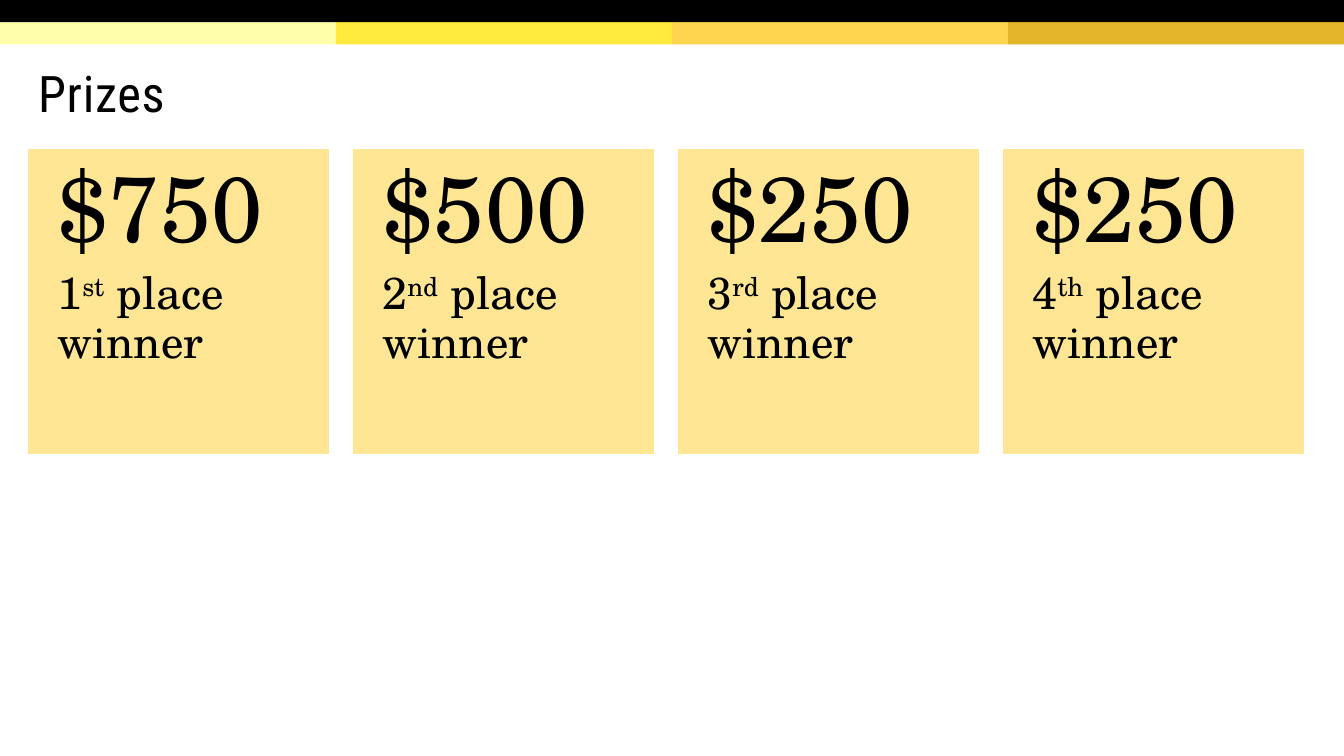
import pptx
import pptx.dml.color
import pptx.enum.shapes
import pptx.enum.text
import pptx.util

WIDTH, HEIGHT = 13.33, 7.5
COLUMNS = 4
BAND_HEIGHT = 0.22
CARD_LEFT, CARD_TOP, CARD_WIDTH, CARD_HEIGHT = 0.28, 1.48, 2.98, 3.02
CONTENT_WIDTH = 12.65
CARD_PITCH = (CONTENT_WIDTH - CARD_WIDTH) / (COLUMNS - 1)

BAND_COLORS = ["FFFFAA", "FFEA3D", "FFD54F", "E4B429"]
PRIZES = [("$750", "1", "st"), ("$500", "2", "nd"), ("$250", "3", "rd"), ("$250", "4", "th")]

TITLE_FONT = {"name": "Roboto Condensed", "size": pptx.util.Pt(36)}
AMOUNT_FONT = {"name": "TeX Gyre Schola", "size": pptx.util.Pt(66)}
PLACE_FONT = {"name": "TeX Gyre Schola", "size": pptx.util.Pt(32)}
MIDDLE = pptx.enum.text.MSO_ANCHOR.MIDDLE
TOP = pptx.enum.text.MSO_ANCHOR.TOP


def color(hex_string):
    return pptx.dml.color.RGBColor.from_string(hex_string)


def inches(*lengths):
    return [pptx.util.Inches(length) for length in lengths]


def add_block(slide, box, fill, outlined=False):
    block = slide.shapes.add_shape(pptx.enum.shapes.MSO_SHAPE.RECTANGLE, *inches(*box))
    block.shadow.inherit = False
    block.fill.solid()
    block.fill.fore_color.rgb = color(fill)
    if outlined:
        block.line.color.rgb = color(fill)
        block.line.width = pptx.util.Pt(0.5)
    else:
        block.line.fill.background()


def add_text(slide, box, pieces, font, insets, anchor, line_spacing=0.9):
    """Each piece is a text and a dict of run properties."""
    frame = slide.shapes.add_textbox(*inches(*box)).text_frame
    sides = ("margin_left", "margin_top", "margin_right", "margin_bottom")
    layout = dict(zip(sides, inches(*insets)), word_wrap=True, vertical_anchor=anchor)
    for key, value in layout.items():
        setattr(frame, key, value)
    paragraph = frame.paragraphs[0]
    paragraph.line_spacing = line_spacing
    for text, properties in pieces:
        run = paragraph.add_run()
        run.text = text
        for key, value in font.items():
            setattr(run.font, key, value)
        run.font.color.rgb = color("000000")
        for key, value in properties.items():
            run.font._element.set(key, value)


def add_prize(slide, column, amount, rank, suffix):
    left = CARD_LEFT + column * CARD_PITCH
    add_block(slide, (left, CARD_TOP, CARD_WIDTH, CARD_HEIGHT), "FFE695", outlined=True)
    place = [(rank, {}), (suffix, {"baseline": "30000"}), (" place winner", {})]
    add_text(slide, (left, 2.69, CARD_WIDTH, 1.81), place, PLACE_FONT,
             (0.29, 0, 0.29, 0.36), TOP)
    add_text(slide, (left, 1.39, CARD_WIDTH, 1.43), [(amount, {})], AMOUNT_FONT,
             (0.29, 0.18, 0.29, 0.18), MIDDLE)


def main():
    deck = pptx.Presentation()
    deck.slide_width, deck.slide_height = inches(WIDTH, HEIGHT)
    slide = deck.slides.add_slide(deck.slide_layouts[6])

    # Header bands
    band_width = WIDTH / COLUMNS
    for column, fill in enumerate(BAND_COLORS):
        add_block(slide, (column * band_width, BAND_HEIGHT, band_width, BAND_HEIGHT), fill)
    add_block(slide, (0, 0, WIDTH, BAND_HEIGHT), "000000")

    # Title
    add_text(slide, (CARD_LEFT, 0.47, CONTENT_WIDTH, 0.98), [("Prizes", {"spc": "50"})],
             TITLE_FONT, (0.1, 0.05, 0.1, 0.05), MIDDLE, line_spacing=0.85)

    # Prize cards
    for column, prize in enumerate(PRIZES):
        add_prize(slide, column, *prize)

    deck.save("out.pptx")


if __name__ == "__main__":
    main()
